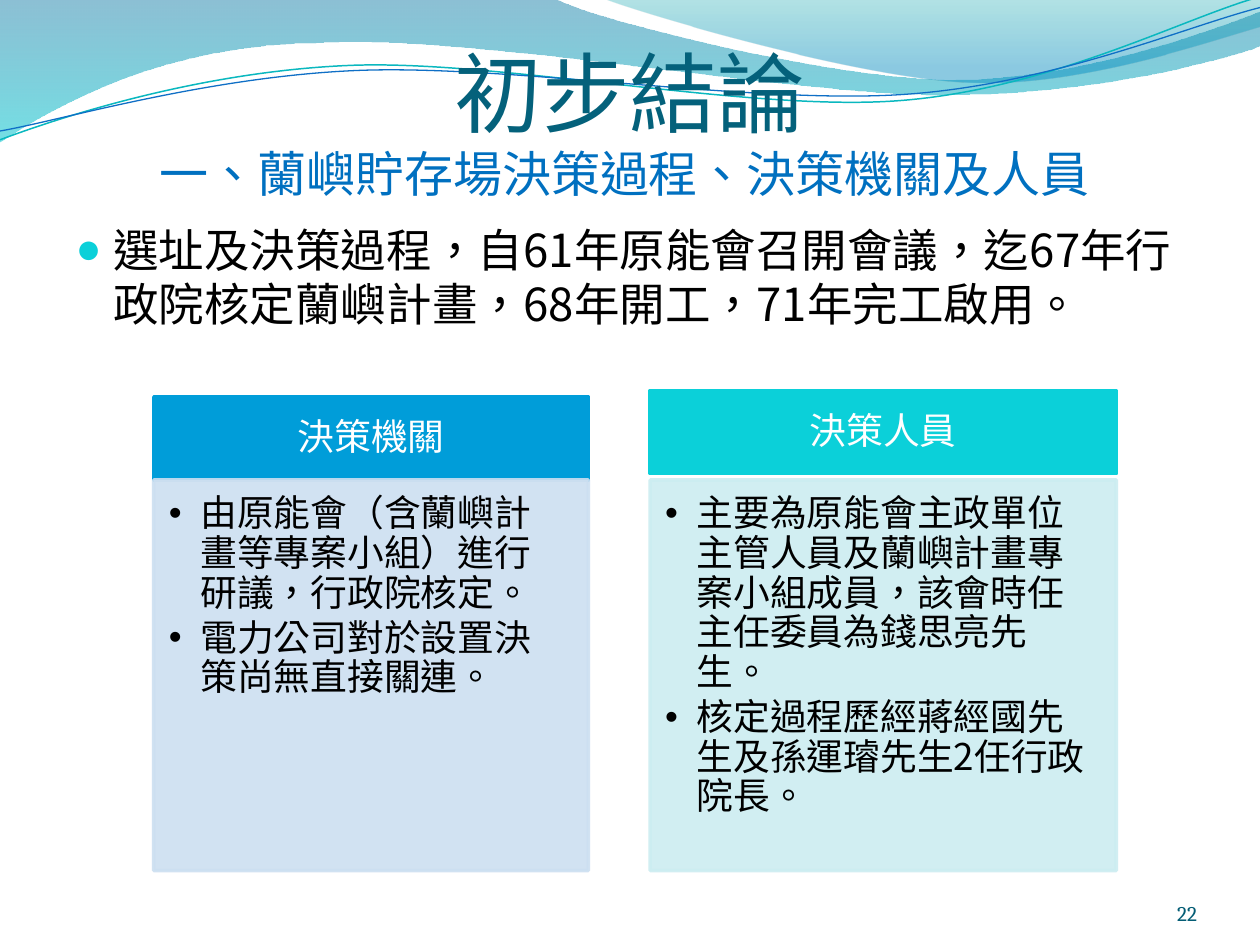
import pptx
import pptx.util
import pptx.dml.color
import pptx.enum.lang
import pptx.enum.shapes
import pptx.enum.text
import pptx.oxml
import pptx.oxml.ns

Inches = pptx.util.Inches
Pt = pptx.util.Pt
ALIGN = pptx.enum.text.PP_ALIGN
ANCHOR = pptx.enum.text.MSO_ANCHOR
NS = pptx.oxml.ns.nsdecls("a")
CJK = "Noto Sans CJK SC"
COLORS = {
    "title": "04617B", "subtitle": "0070C0", "text": "000000", "white": "FFFFFF",
    "number": "045D75", "bullet": "0BD0D9",
    "wave_blue": "0074A1", "wave_cyan": "00C6CF",
    "crest_teal": "00A1A9", "crest_blue": "008BBF",
    "teal_line": "0AB8BF", "blue_line": "0F6FC6",
    "agency": "009DD9", "agency_body": "CCDFF1",
    "people": "0BD0D9", "people_body": "CCEDF1",
}
FILLED_WAVES = [
    ([(0, -0.01), (4.4, -0.01),
      (4.76, 0.17, 6.64, 0.63, 7.58, 0.63), (8.53, 0.63, 9.58, 0.26, 10, 0.09),
      (10.01, 0.36), (9.83, 0.44, 8.7, 0.76, 7.46, 0.75),
      (6.22, 0.75, 3.82, 0.28, 2.57, 0.34), (1.29, 0.35, 0.46, 0.83, -0.01, 1.13)],
     [(0, "wave_blue", 45), (100, "wave_cyan", 55)]),
    ([(4.79, -0.01), (5.09, 0.11, 6.82, 0.62, 7.69, 0.65),
      (8.56, 0.69, 9.61, 0.32, 10, 0.21), (10, 0)],
     [(0, "crest_teal", 30), (80, "crest_blue", 45)]),
]
LINE_WAVES = [
    ([(0, 1.11), (0.48, 0.93, 1.58, 0.57, 2.77, 0.52),
      (3.95, 0.47, 5.93, 0.89, 7.13, 0.8), (8.33, 0.71, 9.38, 0.15, 9.98, -0.02)],
     "teal_line", 0.85),
    ([(0, 1.04), (0.47, 0.96, 1.64, 0.61, 2.83, 0.56),
      (4.03, 0.51, 5.97, 0.83, 7.17, 0.75), (8.36, 0.67, 9.41, 0.21, 10, 0.06)],
     "blue_line", 0.75),
]
CARDS = [
    ((1.22, 3.15, 3.45, 3.76), "agency", "決策機關",
     ["由原能會（含蘭嶼計畫等專案小組）進行研議，行政院核定。",
      "電力公司對於設置決策尚無直接關連。"]),
    ((5.16, 3.1, 3.7, 3.81), "people", "決策人員",
     ["主要為原能會主政單位主管人員及蘭嶼計畫專案小組成員，該會時任主任委員為錢思亮先生。",
      "核定過程歷經蔣經國先生及孫運璿先生2任行政院長。"]),
]


def rgb(name):
    """Return the named colour."""
    return pptx.dml.color.RGBColor.from_string(COLORS[name])


def apply(target, values):
    """Set every attribute of the format dict on the target."""
    for name, value in values.items():
        setattr(target, name, value)


def place(shape, box):
    """Move a shape to a box given in inches."""
    apply(shape, dict(zip(("left", "top", "width", "height"), map(Inches, box))))


def set_frame(frame, anchor, margins):
    """Set anchor and left, top, right and bottom insets of a text frame."""
    sides = ("margin_left", "margin_top", "margin_right", "margin_bottom")
    apply(frame, {"word_wrap": True, "vertical_anchor": anchor,
                  **dict(zip(sides, map(Inches, margins)))})


def add_run(paragraph, text, size, color, face=CJK):
    """Add a run in one face for Latin and East Asian text."""
    run = paragraph.add_run()
    run.text = text
    apply(run.font, {"size": Pt(size), "name": face,
                     "language_id": pptx.enum.lang.MSO_LANGUAGE_ID.TRADITIONAL_CHINESE})
    run.font.color.rgb = rgb(color)
    run.font._element.append(pptx.oxml.parse_xml(f'<a:ea {NS} typeface="{face}"/>'))


def set_bullet(paragraph, indent, char, style=""):
    """Give a paragraph a hanging bullet."""
    properties = paragraph._p.get_or_add_pPr()
    properties.set("marL", str(Inches(indent)))
    properties.set("indent", str(-Inches(indent)))
    for xml in (style, f'<a:buFont {NS} typeface="Arial"/>',
                f'<a:buChar {NS} char="{char}"/>'):
        for element in pptx.oxml.parse_xml(f"<a:pPr {NS}>{xml}</a:pPr>"):
            properties.append(element)


def add_wave(slide, segments, close):
    """Draw a shadowless outline whose six-number segments are cubic curves."""
    ends = [tuple(map(Inches, segment[-2:])) for segment in segments]
    builder = slide.shapes.build_freeform(*ends[0], scale=1.0)
    builder.add_line_segments(ends[1:], close=close)
    wave = builder.convert_to_shape()
    wave.shadow.inherit = False
    sides = list(wave._element.spPr.iter(pptx.oxml.ns.qn("a:lnTo")))
    for side, segment in zip(sides, segments[1:]):
        if len(segment) == 6:
            points = "".join(
                f'<a:pt x="{Inches(x) - wave.left}" y="{Inches(y) - wave.top}"/>'
                for x, y in zip(segment[::2], segment[1::2]))
            side.getparent().replace(side, pptx.oxml.parse_xml(
                f"<a:cubicBezTo {NS}>{points}</a:cubicBezTo>"))
    return wave


def add_waves(slide):
    """Draw the filled waves and thin lines along the top."""
    for segments, stops in FILLED_WAVES:
        wave = add_wave(slide, segments, True)
        wave.line.fill.background()
        marks = "".join(
            f'<a:gs pos="{at * 1000}"><a:srgbClr val="{COLORS[color]}">'
            f'<a:alpha val="{alpha * 1000}"/></a:srgbClr></a:gs>'
            for at, color, alpha in stops)
        wave._element.spPr.find(pptx.oxml.ns.qn("a:custGeom")).addnext(
            pptx.oxml.parse_xml(f'<a:gradFill {NS}><a:gsLst>{marks}</a:gsLst>'
                                '<a:lin ang="5400000" scaled="0"/></a:gradFill>'))
    for segments, color, width in LINE_WAVES:
        wave = add_wave(slide, segments, False)
        wave.fill.background()
        wave.line.color.rgb = rgb(color)
        wave.line.width = Pt(width)


def fill_title(title, box):
    """Write the heading and its subtitle."""
    place(title, box)
    set_frame(title.text_frame, ANCHOR.BOTTOM, (0, 0.05, 0, 0))
    heading = title.text_frame.paragraphs[0]
    heading.alignment = ALIGN.CENTER
    add_run(heading, "初步結論", 50, "title")
    heading.add_line_break()
    add_run(heading, "一、蘭嶼貯存場決策過程、決策機關及人員 ", 28, "subtitle")


def fill_summary(body, box):
    """Write the bulleted summary."""
    place(body, box)
    summary = body.text_frame.paragraphs[0]
    summary.space_before = Pt(0)
    set_bullet(summary, 0.3, "●",
               f'<a:buClr><a:srgbClr val="{COLORS["bullet"]}"/></a:buClr>'
               '<a:buSzPct val="95000"/>')
    add_run(summary, "選址及決策過程，自61年原能會召開會議，迄67年行政院核定蘭嶼計畫，"
                     "68年開工，71年完工啟用。", 26, "text")


def add_panel(slide, box, color, alpha=100):
    """Add a rectangle with matching fill and line."""
    panel = slide.shapes.add_shape(pptx.enum.shapes.MSO_SHAPE.RECTANGLE, *map(Inches, box))
    panel.shadow.inherit = False
    panel.fill.solid()
    panel.line.width = Pt(2)
    for paint in (panel.fill.fore_color, panel.line.color):
        paint.rgb = rgb(color)
    if alpha < 100:
        for tint in panel._element.spPr.iter(pptx.oxml.ns.qn("a:srgbClr")):
            tint.append(pptx.oxml.parse_xml(f'<a:alpha {NS} val="{alpha * 1000}"/>'))
    return panel.text_frame


def add_card(slide, box, color, heading, points):
    """Add a header panel over a panel of bullet points."""
    left, top, width, height = box
    body_height = 3.1
    header = add_panel(slide, (left, top, width, 0.66), color)
    set_frame(header, ANCHOR.MIDDLE, (0.16, 0.09, 0.16, 0.09))
    apply(header.paragraphs[0], {"alignment": ALIGN.CENTER, "line_spacing": 0.9})
    add_run(header.paragraphs[0], heading, 21, "white")
    body = add_panel(slide, (left, top + height - body_height, width, body_height),
                     color + "_body", 90)
    set_frame(body, ANCHOR.TOP, (0.12, 0.12, 0.18, 0.18))
    for index, text in enumerate(points):
        point = body.add_paragraph() if index else body.paragraphs[0]
        apply(point, {"alignment": ALIGN.LEFT, "line_spacing": 0.9, "space_after": Pt(3)})
        set_bullet(point, 0.25, "•")
        point._p.pPr.set("hangingPunct", "0")
        add_run(point, text, 21, "text")


def add_number(slide, box):
    """Add the page number."""
    frame = slide.shapes.add_textbox(*map(Inches, box)).text_frame
    set_frame(frame, ANCHOR.BOTTOM, (0, 0, 0, 0))
    frame.paragraphs[0].alignment = ALIGN.RIGHT
    add_run(frame.paragraphs[0], "22", 12, "number", "Cambria")


def main():
    """Build and save the slide."""
    deck = pptx.Presentation()
    apply(deck, {"slide_width": Inches(10), "slide_height": Inches(7.5)})
    slide = deck.slides.add_slide(deck.slide_layouts[1])
    title, body = slide.placeholders
    add_waves(slide)
    for placeholder in (title, body):
        slide.shapes._spTree.append(placeholder._element)
    fill_title(title, (0.5, 0.36, 9, 1.25))
    fill_summary(body, (0.5, 1.71, 9, 4.8))
    add_number(slide, (8.67, 6.95, 0.83, 0.4))
    for card in CARDS:
        add_card(slide, *card)
    deck.save("out.pptx")


if __name__ == "__main__":
    main()
